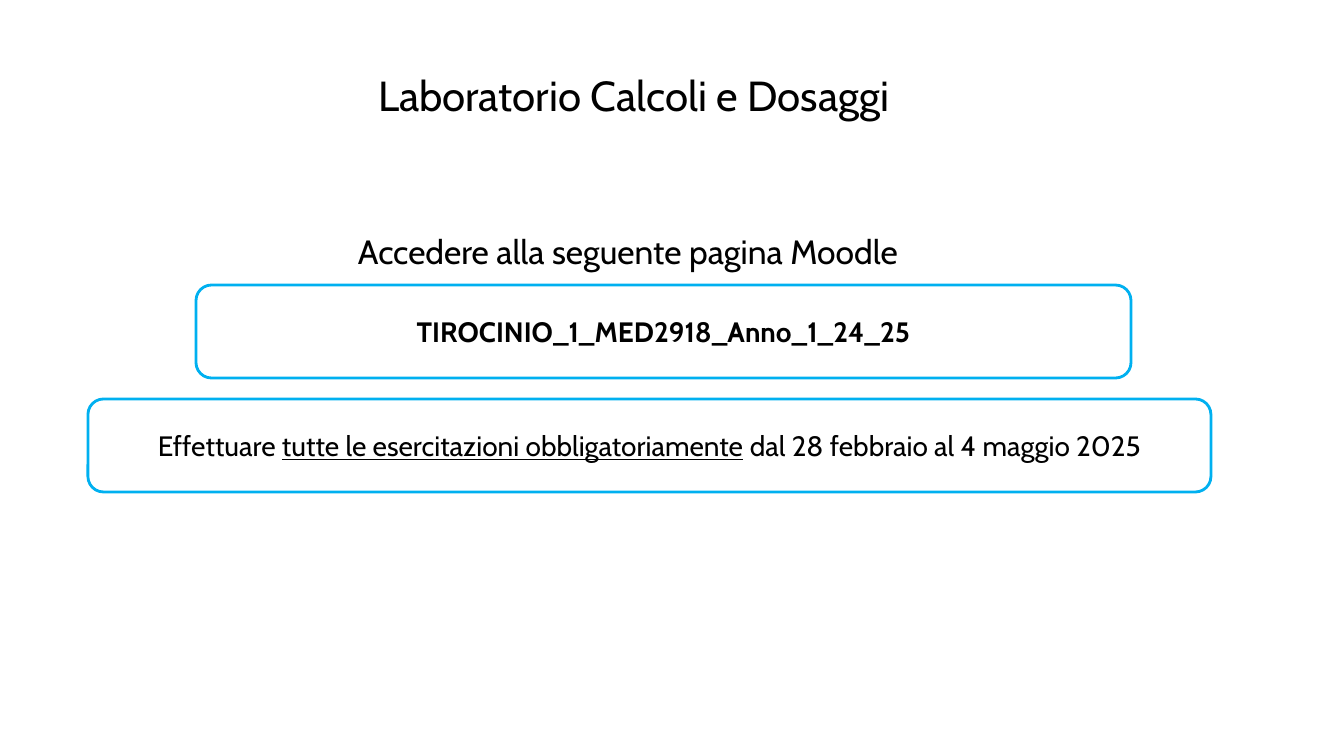
import pptx
import pptx.util
import pptx.dml.color
import pptx.enum.shapes
import pptx.enum.text

# Content: text, place in px (left, top, width, height), format
BLACK = pptx.dml.color.RGBColor(0, 0, 0)
BLUE = pptx.dml.color.RGBColor(0x00, 0xB0, 0xF0)
FONT = "Cabin"
WIDE, HIGH = 1344, 756
PX = 914400 / 100.8

TITLE = ("Laboratorio Calcoli e Dosaggi", (368, 64, 563, 61), 30)
LEAD = ("Accedere alla seguente pagina Moodle", (348, 226, 605, 50), 24)
CARDS = [
    ((196, 285, 935, 93),
     [("TIROCINIO_1_MED2918_Anno_1_24_25", {"bold": True})]),
    ((88, 399, 1123, 93),
     [("Effettuare ", {}),
      ("tutte le esercitazioni obbligatoriamente", {"underline": True}),
      (" dal 28 febbraio al 4 maggio 2025", {})]),
]
CARD_SIZE = 20


def scale(box):
    return [round(n * PX) for n in box]


def write(frame, runs, size, align, anchor):
    frame.word_wrap = True
    frame.auto_size = pptx.enum.text.MSO_AUTO_SIZE.NONE
    frame.vertical_anchor = anchor
    para = frame.paragraphs[0]
    para.alignment = align
    for text, extra in runs:
        run = para.add_run()
        run.text = text
        run.font.color.rgb = BLACK
        style = {"name": FONT, "size": pptx.util.Pt(size), **extra}
        for key, value in style.items():
            setattr(run.font, key, value)


def main():
    deck = pptx.Presentation()
    deck.slide_width, deck.slide_height = scale((WIDE, HIGH))
    slide = deck.slides.add_slide(deck.slide_layouts[5])
    align = pptx.enum.text.PP_ALIGN
    anchor = pptx.enum.text.MSO_ANCHOR

    # Title and lead line
    title = slide.shapes.title
    text, box, size = TITLE
    title.left, title.top, title.width, title.height = scale(box)
    write(title.text_frame, [(text, {})], size, align.LEFT, anchor.TOP)

    text, box, size = LEAD
    lead = slide.shapes.add_textbox(*scale(box))
    write(lead.text_frame, [(text, {})], size, align.LEFT, anchor.TOP)

    # Outlined cards
    for box, runs in CARDS:
        card = slide.shapes.add_shape(
            pptx.enum.shapes.MSO_SHAPE.ROUNDED_RECTANGLE, *scale(box))
        card.shadow.inherit = False
        card.fill.background()
        card.line.color.rgb = BLUE
        card.line.width = pptx.util.Pt(2)
        write(card.text_frame, runs, CARD_SIZE, align.CENTER, anchor.MIDDLE)

    deck.save("out.pptx")


if __name__ == "__main__":
    main()
